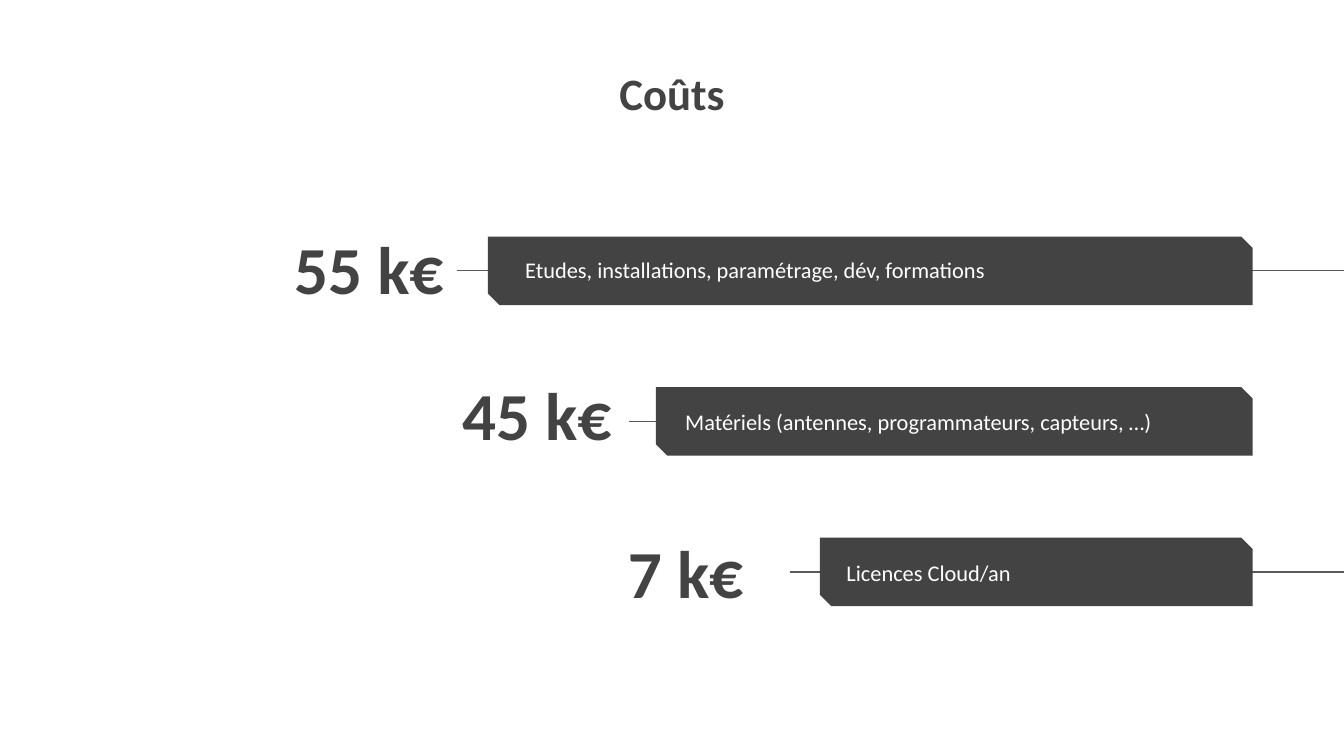
"""Build the cost slide: three amounts, each tied to a labelled bar."""
from dataclasses import dataclass

from lxml.etree import SubElement
from pptx import Presentation
from pptx.dml.color import RGBColor
from pptx.enum.shapes import MSO_CONNECTOR, MSO_SHAPE
from pptx.enum.text import MSO_ANCHOR as Anchor, MSO_AUTO_SIZE, PP_ALIGN as Align
from pptx.oxml.ns import qn
from pptx.util import Inches, Pt

DARK = RGBColor(0x43, 0x43, 0x43)
RULE = RGBColor(0x59, 0x59, 0x59)
WHITE = RGBColor(0xFF, 0xFF, 0xFF)

TITLE_FONT = {"name": "Calibri", "size": Pt(24), "bold": True}
AMOUNT_FONT = {"name": "Calibri", "size": Pt(36), "bold": True}
LABEL_FONT = {"name": "Calibri", "size": Pt(12), "bold": False}
FRAME = {
    "word_wrap": True,
    "auto_size": MSO_AUTO_SIZE.NONE,
    **{f"margin_{side}": Inches(0.1) for side in ("left", "top", "right", "bottom")},
}

SLIDE_WIDTH = 10
SLIDE_HEIGHT = SLIDE_WIDTH * 9 / 16
FIRST_BAR_TOP = 1.76
BAR_PITCH = 1.12
BAR_HEIGHT = 0.51
BAR_RIGHT = 9.32


@dataclass(frozen=True)
class Box:
    left: float
    top: float
    width: float
    height: float


@dataclass(frozen=True)
class Cost:
    amount: str
    label: str
    bar_left: float
    rule_left: float
    rule_right: float
    amount_box: Box
    label_box: Box
    label_anchor: Anchor


COSTS = (
    Cost("55 k€", "Etudes, installations, paramétrage, dév, formations", 3.63, 3.4, SLIDE_WIDTH,
         Box(0.95, 1.58, 2.45, 0.83), Box(3.81, 1.82, 4.9, 0.37), Anchor.MIDDLE),
    Cost("45 k€", "Matériels (antennes, programmateurs, capteurs, …)", 4.88, 4.68, 9.2,
         Box(2.72, 2.66, 1.93, 0.83), Box(5, 2.94, 4.14, 0.37), Anchor.TOP),
    Cost("7 k€", "Licences Cloud/an", 6.1, 5.88, SLIDE_WIDTH,
         Box(3.67, 3.84, 1.96, 0.83), Box(6.2, 4.06, 3.57, 0.37), Anchor.TOP),
)


def apply(target, values: dict) -> None:
    for attribute, value in values.items():
        setattr(target, attribute, value)


def inches(box: Box) -> tuple:
    return tuple(Inches(n) for n in (box.left, box.top, box.width, box.height))


def write(holder, text: str, font: dict, color: RGBColor, align: Align, anchor: Anchor) -> None:
    frame = holder.text_frame
    apply(frame, {**FRAME, "vertical_anchor": anchor})
    frame.text = text
    paragraph = frame.paragraphs[0]
    paragraph.alignment = align
    run = paragraph.runs[0]
    apply(run.font, font)
    run.font.color.rgb = color


def draw_rule(shapes, left: float, right: float, y: float) -> None:
    rule = shapes.add_connector(
        MSO_CONNECTOR.STRAIGHT, Inches(right), Inches(y), Inches(left), Inches(y))
    rule.line.color.rgb = RULE
    rule.line.width = Pt(0.75)
    SubElement(rule._element.spPr, qn("a:effectLst"))


def draw_bar(shapes, box: Box) -> None:
    bar = shapes.add_shape(MSO_SHAPE.SNIP_2_DIAG_RECTANGLE, *inches(box))
    bar.adjustments[0] = 0
    bar.adjustments[1] = 0.167
    bar.shadow.inherit = False
    bar.fill.solid()
    bar.fill.fore_color.rgb = DARK
    bar.line.fill.background()


def draw_cost(shapes, cost: Cost, top: float) -> None:
    draw_rule(shapes, cost.rule_left, cost.rule_right, top + BAR_HEIGHT / 2)
    draw_bar(shapes, Box(cost.bar_left, top, BAR_RIGHT - cost.bar_left, BAR_HEIGHT))
    amount = shapes.add_textbox(*inches(cost.amount_box))
    write(amount, cost.amount, AMOUNT_FONT, DARK, Align.RIGHT, Anchor.MIDDLE)
    label = shapes.add_textbox(*inches(cost.label_box))
    write(label, cost.label, LABEL_FONT, WHITE, Align.LEFT, cost.label_anchor)


def main() -> None:
    deck = Presentation()
    deck.slide_width, deck.slide_height = Inches(SLIDE_WIDTH), Inches(SLIDE_HEIGHT)
    shapes = deck.slides.add_slide(deck.slide_layouts[5]).shapes
    heading = shapes.title
    heading.left, heading.top, heading.width, heading.height = inches(Box(2.15, 0.39, 5.7, 1.03))
    write(heading, "Coûts", TITLE_FONT, DARK, Align.CENTER, Anchor.TOP)
    for row, cost in enumerate(COSTS):
        draw_cost(shapes, cost, FIRST_BAR_TOP + row * BAR_PITCH)
    deck.save("out.pptx")


if __name__ == "__main__":
    main()
